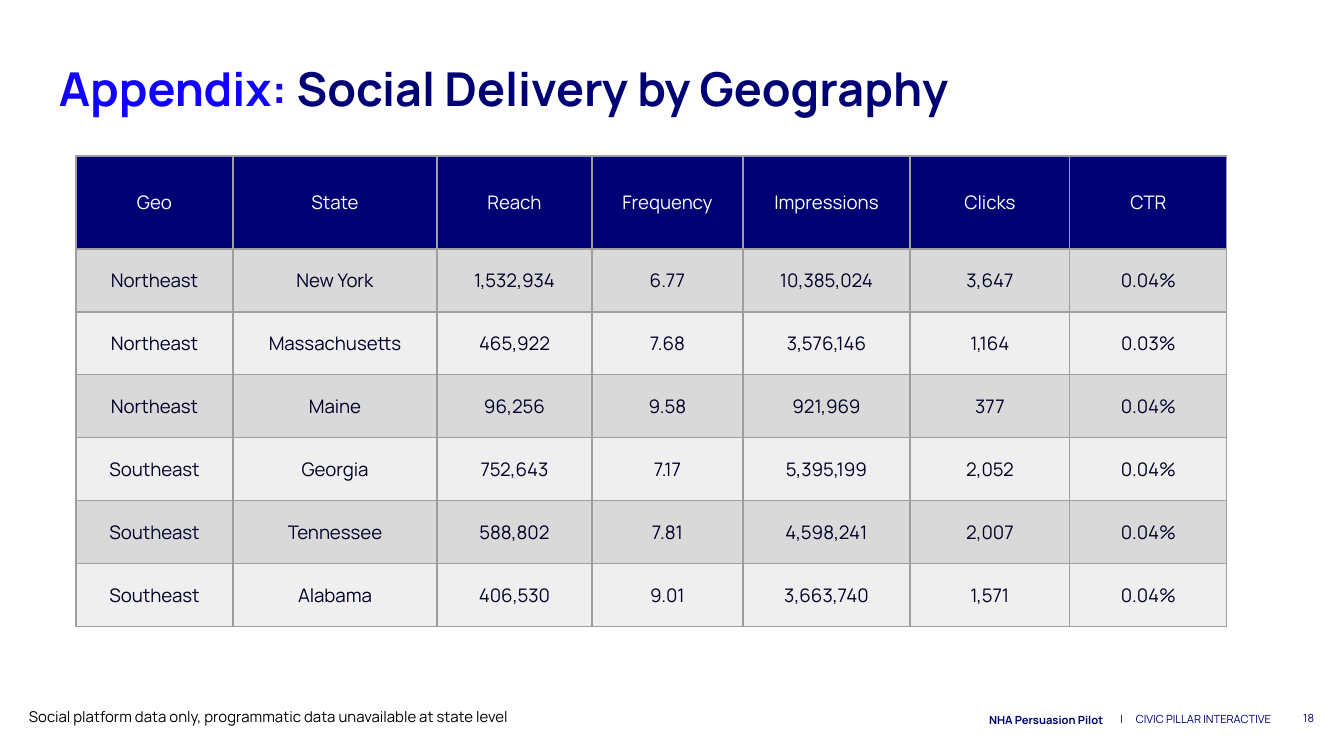
from lxml import etree
from pptx import Presentation
from pptx.dml.color import RGBColor
from pptx.enum import text
from pptx.oxml import ns
from pptx.util import Emu, Pt

PX = 914400 / 134.4
FONT = "Manrope"
COLORS = {
    "navy": "000075", "blue": "1100FF", "ink": "000028", "black": "000000",
    "white": "FFFFFF", "dark_band": "D9D9D9", "light_band": "EFEFEF", "border": "9E9E9E",
}
LEFT, CENTER, RIGHT = text.PP_ALIGN.LEFT, text.PP_ALIGN.CENTER, text.PP_ALIGN.RIGHT
TOP, MIDDLE = text.MSO_ANCHOR.TOP, text.MSO_ANCHOR.MIDDLE

ROWS = [
    ("Geo", "State", "Reach", "Frequency", "Impressions", "Clicks", "CTR"),
    ("Northeast", "New York", "1,532,934", "6.77", "10,385,024", "3,647", "0.04%"),
    ("Northeast", "Massachusetts", "465,922", "7.68", "3,576,146", "1,164", "0.03%"),
    ("Northeast", "Maine", "96,256", "9.58", "921,969", "377", "0.04%"),
    ("Southeast", "Georgia", "752,643", "7.17", "5,395,199", "2,052", "0.04%"),
    ("Southeast", "Tennessee", "588,802", "7.81", "4,598,241", "2,007", "0.04%"),
    ("Southeast", "Alabama", "406,530", "9.01", "3,663,740", "1,571", "0.04%"),
]
COLUMN_WIDTHS = (157, 204, 155, 151, 167, 160, 157)
HEADER_HEIGHT, ROW_HEIGHT = 93, 63


def px(n):
    return Emu(round(n * PX))


def rgb(name):
    return RGBColor.from_string(COLORS[name])


def set_all(obj, values):
    for name, value in values.items():
        setattr(obj, name, value)


def margins(x, y):
    return {"margin_left": px(x), "margin_right": px(x),
            "margin_top": px(y), "margin_bottom": px(y)}


def add_run(p, content, size, color, bold=False):
    r = p.add_run()
    r.text = content
    set_all(r.font, {"name": FONT, "size": Pt(size), "bold": bold})
    r.font.color.rgb = rgb(color)


def add_text(s, box, runs, size, align=LEFT, anchor=TOP, inset=(13, 13), spacing=None):
    tf = s.shapes.add_textbox(*map(px, box)).text_frame
    set_all(tf, {"word_wrap": True, "vertical_anchor": anchor, **margins(*inset)})
    p = tf.paragraphs[0]
    set_all(p, {"alignment": align, "line_spacing": spacing})
    for content, color, bold in runs:
        add_run(p, content, size, color, bold)


def add_borders(cell):
    tcPr = cell._tc.get_or_add_tcPr()
    for i, side in enumerate(("lnL", "lnR", "lnT", "lnB")):
        ln = etree.Element(ns.qn(f"a:{side}"), w=str(Pt(0.75)))
        fill = etree.SubElement(ln, ns.qn("a:solidFill"))
        etree.SubElement(fill, ns.qn("a:srgbClr"), val=COLORS["border"])
        tcPr.insert(i, ln)


def fill_cell(cell, content, fill, color):
    set_all(cell, {"vertical_anchor": MIDDLE, **margins(13, 13)})
    cell.fill.solid()
    cell.fill.fore_color.rgb = rgb(fill)
    p = cell.text_frame.paragraphs[0]
    p.alignment = CENTER
    add_run(p, content, 10, color)
    add_borders(cell)


def delivery_table(s, x, y):
    heights = [HEADER_HEIGHT] + [ROW_HEIGHT] * (len(ROWS) - 1)
    box = (x, y, sum(COLUMN_WIDTHS), sum(heights))
    table = s.shapes.add_table(len(ROWS), len(COLUMN_WIDTHS), *map(px, box)).table
    for column, width in zip(table.columns, COLUMN_WIDTHS):
        column.width = px(width)
    for i, (row, height) in enumerate(zip(ROWS, heights)):
        table.rows[i].height = px(height)
        if i == 0:
            fill, color = "navy", "white"
        else:
            fill, color = ("dark_band" if i % 2 else "light_band"), "ink"
        for j, content in enumerate(row):
            fill_cell(table.cell(i, j), content, fill, color)


def title(s, x, y, w, h):
    runs = [("Appendix:", "blue", True), (" Social Delivery by Geography", "navy", True)]
    add_text(s, (x, y, w, h), runs, 25)


def footer(s, x, y, w, h):
    add_text(s, (x + 944, y + 18, 320, 24), [("CIVIC PILLAR INTERACTIVE", "navy", False)],
             6, RIGHT, inset=(9, 5))
    add_text(s, (x + 1016, y + 18, 100, 24), [("|", "navy", False)], 6, RIGHT, inset=(9, 5))
    add_text(s, (x + w - 82, y, 81, h), [("18", "navy", False)], 6, RIGHT, MIDDLE)
    add_text(s, (x + 147, y + 18, 953, 24), [("NHA Persuasion Pilot", "navy", True)],
             6, RIGHT, MIDDLE, spacing=1.15)
    note = "Social platform data only, programmatic data unavailable at state level"
    add_text(s, (x, y + 10, 841, 46), [(note, "black", False)], 8)


def main():
    prs = Presentation()
    set_all(prs, {"slide_width": px(1344), "slide_height": px(756)})
    s = prs.slides.add_slide(prs.slide_layouts[6])
    s.background.fill.solid()
    s.background.fill.fore_color.rgb = rgb("white")
    title(s, 46, 47, 1219, 75)
    delivery_table(s, 76, 156)
    footer(s, 16, 689, 1312, 58)
    prs.save("out.pptx")


if __name__ == "__main__":
    main()
